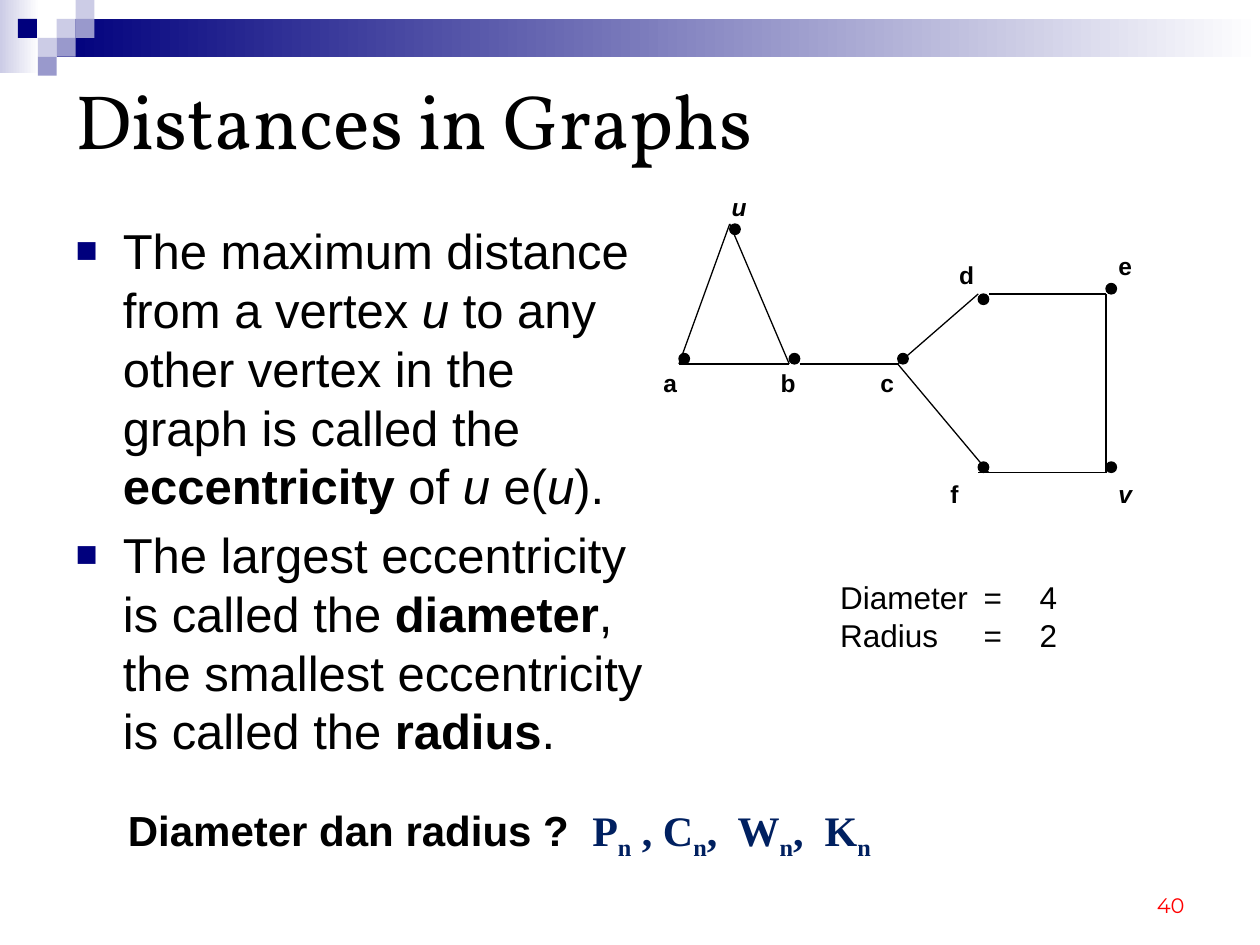
from lxml import etree
from pptx import Presentation
from pptx.dml.color import RGBColor
from pptx.enum import shapes, text
from pptx.oxml.ns import qn
from pptx.util import Pt

BLACK = RGBColor(0x00, 0x00, 0x00)
WHITE = RGBColor(0xFF, 0xFF, 0xFF)
NAVY = RGBColor(0x00, 0x00, 0x7D)
LAVENDER = RGBColor(0xCC, 0xCC, 0xE6)
VIOLET = RGBColor(0x99, 0x99, 0xCC)
DARK_BLUE = RGBColor(0x00, 0x20, 0x60)
RED = RGBColor(0xFF, 0x00, 0x00)


def add_run(paragraph, content, size, style="", font="Arial", color=BLACK):
    """Add a run; style may hold b (bold), i (italic) and s (subscript)."""
    run = paragraph.add_run()
    run.text = content
    run.font.size = Pt(size)
    run.font.name = font
    run.font.color.rgb = color
    run.font.bold = "b" in style
    run.font.italic = "i" in style
    if "s" in style:
        run.font._element.set("baseline", "-25000")


def add_text_box(left, top, width, height):
    box = slide.shapes.add_textbox(Pt(left), Pt(top), Pt(width), Pt(height))
    box.text_frame.word_wrap = False
    return box.text_frame


presentation = Presentation()
presentation.slide_width = Pt(720)
presentation.slide_height = Pt(540)
slide = presentation.slides.add_slide(presentation.slide_layouts[1])

# Header band: two gradients under a staircase of squares
gradients = [(0, 0, 22.5, 42, LAVENDER), (32.4, 10.8, 687.6, 21.6, NAVY)]
SQUARE = 10.8
squares = [(3, 1, LAVENDER), (4, 0, LAVENDER), (4, 1, VIOLET), (2, 2, LAVENDER),
           (0.95, 1, NAVY), (3, 2, VIOLET), (2, 3, VIOLET)]
band = gradients + [(column * SQUARE, row * SQUARE, SQUARE, SQUARE, color)
                    for column, row, color in squares]
for index, (left, top, width, height, color) in enumerate(band):
    shape = slide.shapes.add_shape(shapes.MSO_SHAPE.RECTANGLE,
                                   Pt(left), Pt(top), Pt(width), Pt(height))
    shape.shadow.inherit = False
    shape.line.fill.background()
    if index < len(gradients):
        shape.fill.gradient()
        shape.fill.gradient_angle = 0
        for stop, position, stop_color in zip(shape.fill.gradient_stops, (0, 1), (color, WHITE)):
            stop.position = position
            stop.color.rgb = stop_color
    else:
        shape.fill.solid()
        shape.fill.fore_color.rgb = color

# Title
title = slide.shapes.title
title.left, title.top, title.width, title.height = Pt(36), Pt(36), Pt(648), Pt(64)
title.text_frame.auto_size = text.MSO_AUTO_SIZE.NONE
title.text_frame.vertical_anchor = text.MSO_ANCHOR.MIDDLE
paragraph = title.text_frame.paragraphs[0]
paragraph.alignment = text.PP_ALIGN.LEFT
add_run(paragraph, "Distances in Graphs", 44, font="Vollkorn")

# Definitions
definitions = [
    [("The maximum distance from a vertex ", ""), ("u", "i"),
     (" to any other vertex in the graph is called the ", ""), ("eccentricity", "b"),
     (" of ", ""), ("u", "i"), (" e(", ""), ("u", "i"), (").", "")],
    [("The largest eccentricity is called the ", ""), ("diameter", "b"),
     (", the smallest eccentricity is called the ", ""), ("radius", "b"), (".", "")],
]
body = slide.placeholders[1]
body.left, body.top, body.width, body.height = Pt(36), Pt(122.4), Pt(341.3), Pt(334.8)
body.text_frame.auto_size = text.MSO_AUTO_SIZE.NONE
for index, runs in enumerate(definitions):
    paragraph = body.text_frame.add_paragraph() if index else body.text_frame.paragraphs[0]
    paragraph.space_before = Pt(5.6)
    properties = paragraph._p.get_or_add_pPr()
    properties.set("marL", str(Pt(27)))
    properties.set("indent", str(-Pt(27)))
    bullet_color = etree.SubElement(properties, qn("a:buClr"))
    etree.SubElement(bullet_color, qn("a:srgbClr"), val=str(NAVY))
    etree.SubElement(properties, qn("a:buSzPct"), val="75000")
    etree.SubElement(properties, qn("a:buFont"), typeface="Arial")
    etree.SubElement(properties, qn("a:buChar"), char="■")
    for content, style in runs:
        add_run(paragraph, content, 28, style)

# Graph: dots, edges between dot corners, labels
DOT = 6
dots = {"u": (417, 128), "a": (388, 202), "b": (451, 202), "c": (513, 202),
        "d": (559, 168), "e": (632, 162), "f": (559, 264), "v": (632, 264)}
for left, top in dots.values():
    dot = slide.shapes.add_shape(shapes.MSO_SHAPE.OVAL, Pt(left), Pt(top), Pt(DOT), Pt(DOT))
    dot.shadow.inherit = False
    dot.fill.solid()
    dot.fill.fore_color.rgb = BLACK
    dot.line.color.rgb = BLACK
    dot.line.width = Pt(0.75)

TOP_LEFT, TOP_RIGHT, LOW_LEFT, LOW_RIGHT = (0, 0), (DOT, 0), (0, DOT), (DOT, DOT)
edges = [("b", LOW_RIGHT, "c", LOW_LEFT), ("d", TOP_LEFT, "c", LOW_LEFT),
         ("c", LOW_LEFT, "f", LOW_RIGHT), ("f", LOW_LEFT, "v", LOW_LEFT),
         ("b", LOW_LEFT, "u", TOP_LEFT), ("u", TOP_LEFT, "a", LOW_LEFT),
         ("a", LOW_LEFT, "b", LOW_LEFT), ("v", LOW_LEFT, "e", LOW_LEFT),
         ("e", LOW_LEFT, "d", TOP_RIGHT)]
for start, start_corner, end, end_corner in edges:
    ends = [Pt(place + shift) for name, corner in ((start, start_corner), (end, end_corner))
            for place, shift in zip(dots[name], corner)]
    edge = slide.shapes.add_connector(shapes.MSO_CONNECTOR.STRAIGHT, *ends)
    edge.line.color.rgb = BLACK
    edge.line.width = Pt(0.75)
    etree.SubElement(edge._element.spPr, qn("a:effectLst"))

labels = [("u", 411, 106, "bi"), ("a", 372, 207, "b"), ("b", 439, 207, "b"),
          ("v", 632, 270, "bi"), ("e", 632, 140, "b"), ("d", 541, 145, "b"),
          ("c", 496, 207, "b"), ("f", 536, 270, "b")]
for name, left, top, style in labels:
    frame = add_text_box(left, top, 19 if name == "f" else 22.5, 24)
    add_run(frame.paragraphs[0], name, 14, style)

# Diameter and radius of the graph
results = [(473, 108, ["Diameter\t=", "Radius\t="]), (587, 24.5, ["4", "2"])]
for left, width, lines in results:
    frame = add_text_box(left, 327, width, 50.5)
    for index, line in enumerate(lines):
        paragraph = frame.add_paragraph() if index else frame.paragraphs[0]
        if "\t" in line:
            tabs = etree.SubElement(paragraph._p.get_or_add_pPr(), qn("a:tabLst"))
            etree.SubElement(tabs, qn("a:tab"), pos=str(Pt(82)), algn="l")
        add_run(paragraph, line, 18)

# Closing question
paragraph = add_text_box(66, 456, 448, 36).paragraphs[0]
add_run(paragraph, "Diameter dan radius ?  ", 24, "b")
for family in ("P", " , C", ",  W", ",  K"):
    add_run(paragraph, family, 24, "b", "Times New Roman", DARK_BLUE)
    add_run(paragraph, "n", 24, "bs", "Times New Roman", DARK_BLUE)

# Page number
frame = add_text_box(516, 492, 168, 36)
frame.word_wrap = True
frame.vertical_anchor = text.MSO_ANCHOR.BOTTOM
frame.paragraphs[0].alignment = text.PP_ALIGN.RIGHT
add_run(frame.paragraphs[0], "40", 12, font="Montserrat", color=RED)

presentation.save("out.pptx")
